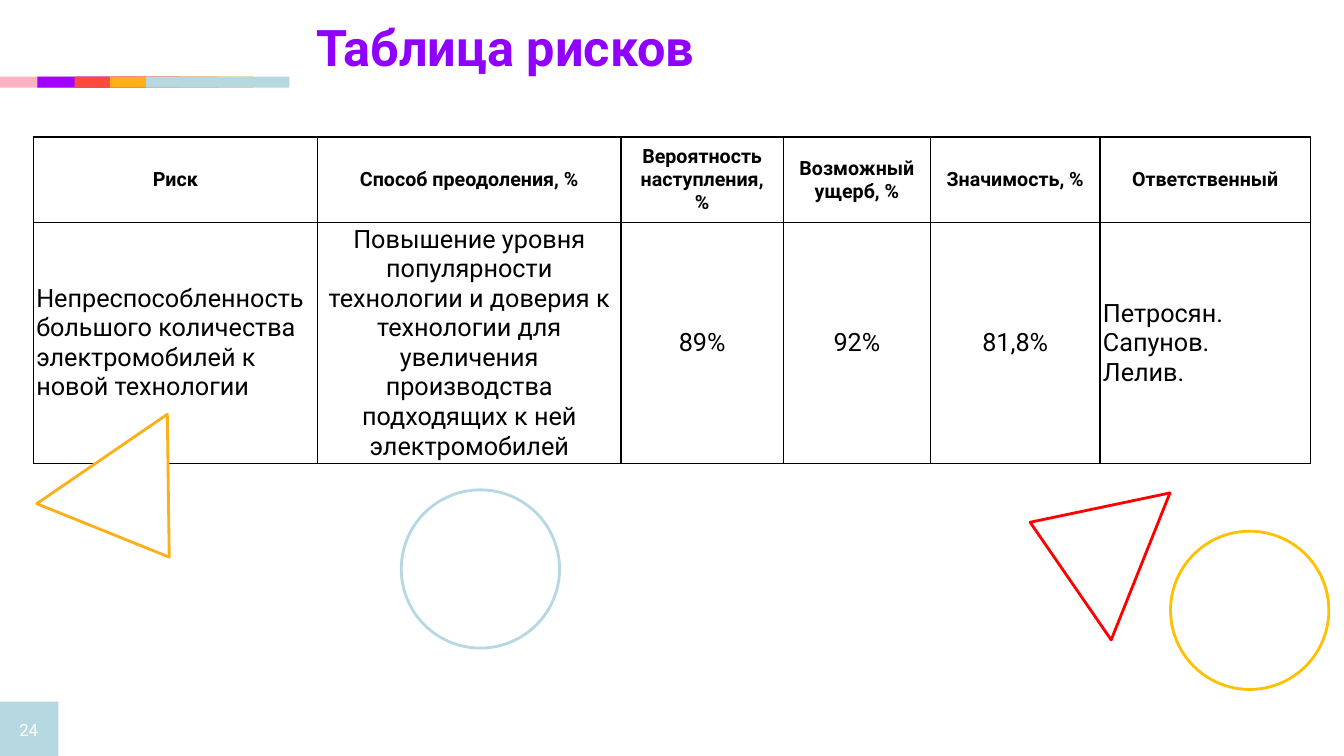
from dataclasses import dataclass

from lxml.etree import SubElement
from pptx import Presentation
from pptx.dml.color import RGBColor
from pptx.enum.shapes import MSO_SHAPE
from pptx.enum.text import MSO_ANCHOR, MSO_AUTO_SIZE, PP_ALIGN
from pptx.oxml.ns import qn
from pptx.shapes.autoshape import Shape
from pptx.table import Table, _Cell
from pptx.text.text import TextFrame, _Paragraph
from pptx.util import Pt

PX = 9144  # EMU in one px, 100 px to the inch
FONT = "Roboto"

BLACK = RGBColor(0x00, 0x00, 0x00)
WHITE = RGBColor(0xFF, 0xFF, 0xFF)
PINK = RGBColor(0xFB, 0xB3, 0xC1)
PURPLE = RGBColor(0x9F, 0x00, 0xFF)
VIOLET = RGBColor(0x8F, 0x00, 0xFF)
CORAL = RGBColor(0xFD, 0x49, 0x3D)
ORANGE = RGBColor(0xFC, 0xAF, 0x17)
AMBER = RGBColor(0xFD, 0xAF, 0x18)
GOLD = RGBColor(0xFF, 0xC0, 0x00)
RED = RGBColor(0xFF, 0x00, 0x00)
SKY = RGBColor(0xB5, 0xD8, 0xE1)
PALE = RGBColor(0xB5, 0xD8, 0xE2)


@dataclass(frozen=True)
class Box:
    left: int
    top: int
    width: int
    height: int

    def emu(self) -> tuple[int, int, int, int]:
        return (self.left * PX, self.top * PX,
                self.width * PX, self.height * PX)


@dataclass(frozen=True)
class Figure:
    kind: MSO_SHAPE
    box: Box
    color: RGBColor
    turn: float = 0


@dataclass(frozen=True)
class Style:
    size: int
    bold: bool = False
    color: RGBColor = BLACK


@dataclass(frozen=True)
class Entry:
    """Cell text: one string per paragraph, with \\n for a line break."""
    lines: tuple[str, ...]
    align: PP_ALIGN = PP_ALIGN.CENTER


HEAD = Style(14, bold=True)
BODY = Style(18)
TITLE = Style(36, bold=True, color=VIOLET)
NUMBER = Style(12, color=WHITE)

BARS = [(0, PINK), (37, PURPLE), (74, CORAL), (109, ORANGE), (145, SKY)]
WIDTHS = [282, 301, 161, 146, 168, 209]
ROW = 85

TITLES = [
    Entry(("Риск",)),
    Entry(("Способ преодоления, %",)),
    Entry(("Вероятность наступления,", "%")),
    Entry(("Возможный ущерб, %",)),
    Entry(("Значимость, %",)),
    Entry(("Ответственный",)),
]
RISK = [
    Entry(("Непреспособленность большого количества электромобилей "
           "к новой технологии",), PP_ALIGN.LEFT),
    Entry(("Повышение уровня популярности технологии и доверия к "
           "технологии для увеличения производства подходящих к ней "
           "электромобилей",)),
    Entry(("89%",)),
    Entry(("92%",)),
    Entry(("81,8%",)),
    Entry(("Петросян.\nСапунов. \nЛелив.",), PP_ALIGN.LEFT),
]

FIGURES = [
    Figure(MSO_SHAPE.ISOSCELES_TRIANGLE, Box(56, 445, 157, 118), AMBER, 145.6),
    Figure(MSO_SHAPE.OVAL, Box(1161, 527, 157, 157), GOLD),
    Figure(MSO_SHAPE.ISOSCELES_TRIANGLE, Box(998, 481, 157, 118), RED, 291.8),
    Figure(MSO_SHAPE.OVAL, Box(398, 486, 157, 157), PALE),
]


def write(para: _Paragraph, text: str, style: Style, align: PP_ALIGN) -> None:
    para.alignment = align
    for i, line in enumerate(text.split("\n")):
        if i:
            para.add_line_break()
        run = para.add_run()
        run.text = line
        run.font.name = FONT
        run.font.size = Pt(style.size)
        run.font.bold = style.bold
        run.font.color.rgb = style.color


def set_frame(frame: TextFrame) -> None:
    frame.word_wrap = True
    frame.auto_size = MSO_AUTO_SIZE.NONE
    frame.vertical_anchor = MSO_ANCHOR.MIDDLE
    frame.margin_left = frame.margin_right = 5 * PX
    frame.margin_top = frame.margin_bottom = 5 * PX


def draw_block(shapes, box: Box, color: RGBColor) -> None:
    """Draw a plain filled rectangle without outline."""
    block = shapes.add_shape(MSO_SHAPE.RECTANGLE, *box.emu())
    block.shadow.inherit = False
    block.fill.solid()
    block.fill.fore_color.rgb = color
    block.line.fill.background()


def draw_figure(shapes, figure: Figure) -> Shape:
    shape = shapes.add_shape(figure.kind, *figure.box.emu())
    shape.rotation = figure.turn
    shape.shadow.inherit = False
    shape.fill.solid()
    shape.fill.fore_color.rgb = WHITE
    shape.line.color.rgb = figure.color
    shape.line.width = Pt(2)
    return shape


def set_border(cell: _Cell, color: RGBColor) -> None:
    props = cell._tc.get_or_add_tcPr()
    for side in ("lnL", "lnR", "lnT", "lnB"):
        line = SubElement(props, qn(f"a:{side}"), w=str(Pt(1)))
        fill = SubElement(line, qn("a:solidFill"))
        SubElement(fill, qn("a:srgbClr"), val=str(color))


def fill_row(table: Table, row: int, items: list[Entry], style: Style,
             side: int, edge: int) -> None:
    """Fill one row; side and edge are the cell margins in px."""
    for col, item in enumerate(items):
        cell = table.cell(row, col)
        set_border(cell, BLACK)
        cell.fill.background()
        cell.vertical_anchor = MSO_ANCHOR.MIDDLE
        cell.margin_left = cell.margin_right = side * PX
        cell.margin_top = cell.margin_bottom = edge * PX
        frame = cell.text_frame
        for i, line in enumerate(item.lines):
            para = frame.add_paragraph() if i else frame.paragraphs[0]
            write(para, line, style, item.align)


def draw_table(shapes) -> None:
    box = Box(33, 136, sum(WIDTHS), 2 * ROW)
    table = shapes.add_table(2, len(WIDTHS), *box.emu()).table
    table.first_row = table.horz_banding = False
    for column, width in zip(table.columns, WIDTHS):
        column.width = width * PX
    fill_row(table, 0, TITLES, HEAD, 10, 5)
    fill_row(table, 1, RISK, BODY, 3, 2)


def main() -> None:
    deck = Presentation()
    deck.slide_width, deck.slide_height = 1333 * PX, 750 * PX
    slide = deck.slides.add_slide(deck.slide_layouts[5])
    shapes = slide.shapes

    title = shapes.title
    title.left, title.top, title.width, title.height = Box(309, 11, 495, 70).emu()
    set_frame(title.text_frame)
    write(title.text_frame.paragraphs[0], "Таблица рисков", TITLE, PP_ALIGN.LEFT)

    stripe = shapes.add_group_shape().shapes
    for left, color in BARS:
        draw_block(stripe, Box(left, 76, 142, 11), color)

    badge = shapes.add_group_shape().shapes
    draw_block(badge, Box(-1, 696, 59, 55), SKY)
    label = badge.add_textbox(*Box(3, 713, 51, 22).emu()).text_frame
    set_frame(label)
    write(label.paragraphs[0], "24", NUMBER, PP_ALIGN.CENTER)

    draw_table(shapes)
    for figure in FIGURES:
        draw_figure(shapes, figure)

    deck.save("out.pptx")


if __name__ == "__main__":
    main()
